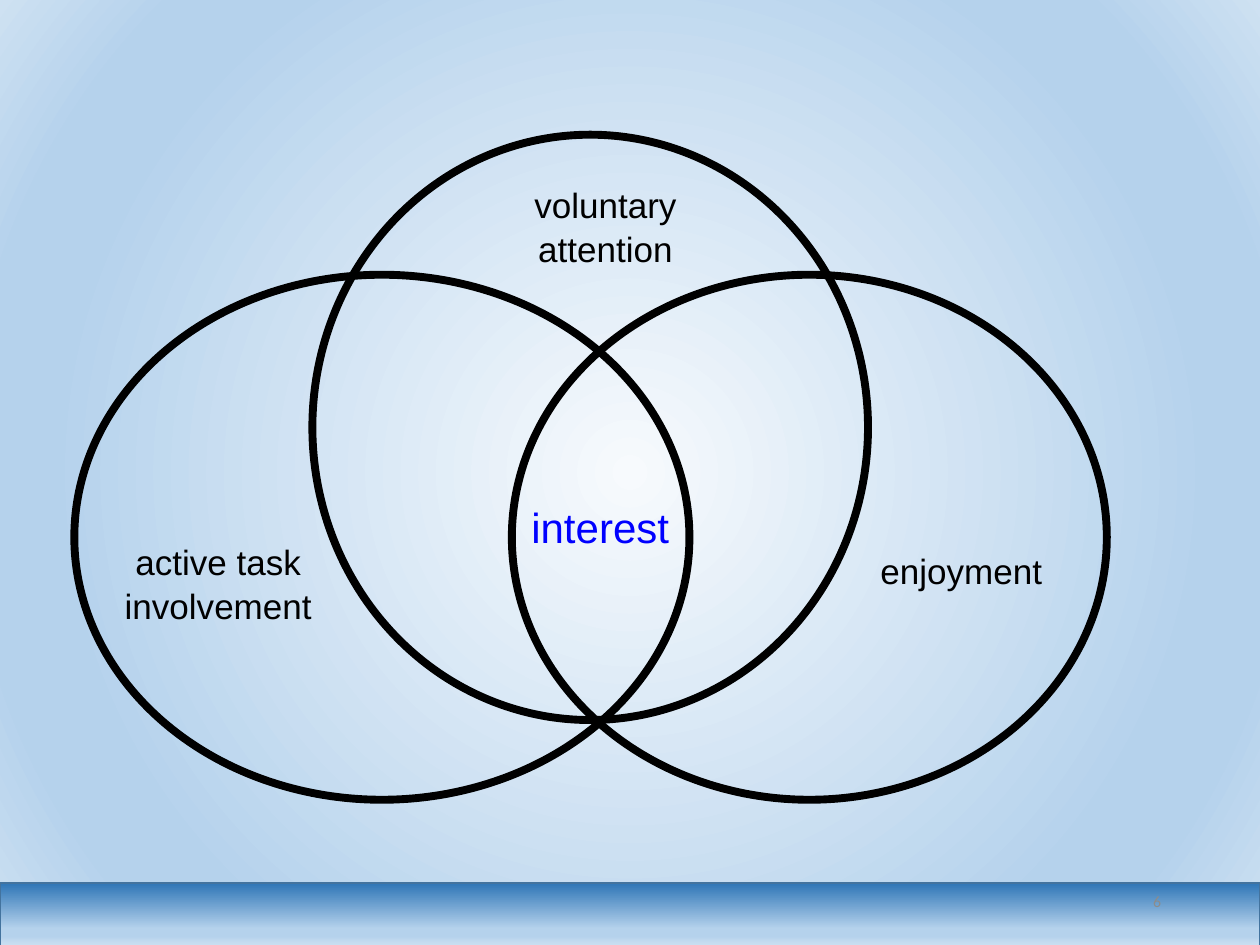
from lxml.etree import SubElement
from pptx import Presentation
from pptx.dml.color import RGBColor
from pptx.enum.shapes import MSO_SHAPE
from pptx.enum.text import MSO_ANCHOR, PP_ALIGN
from pptx.oxml.ns import qn
from pptx.util import Pt

COLORS = {"glow": "F7FAFD", "deep": "2E75B6", "sky": "B5D2EC", "pale": "CEE1F2",
          "edge": "43739E", "black": "000000", "blue": "0000FF", "gray": "8C8C8C"}


def color(name):
    return RGBColor.from_string(COLORS[name])


def set_gradient(fill, owner, stops, circular=False):
    """Give the fill of the owner element a gradient of (percent, color) stops."""
    fill.gradient()
    gradient = next(owner.iter(qn("a:gradFill")))
    for child in list(gradient):
        gradient.remove(child)
    stop_list = SubElement(gradient, qn("a:gsLst"))
    for percent, name in stops:
        stop = SubElement(stop_list, qn("a:gs"), pos=str(percent * 1000))
        SubElement(stop, qn("a:srgbClr"), val=COLORS[name])
    if circular:
        shade = SubElement(gradient, qn("a:path"), path="circle")
        SubElement(shade, qn("a:fillToRect"), l="50000", t="50000", r="50000", b="50000")
    else:
        SubElement(gradient, qn("a:lin"), ang="5400000", scaled="0")


deck = Presentation()
deck.slide_width, deck.slide_height = Pt(720), Pt(540)
page = deck.slides.add_slide(deck.slide_layouts[6])

# Background and bottom bar
outer_stops = [(83, "sky"), (100, "pale")]
set_gradient(page.background.fill, page.element,
             [(0, "glow"), (74, "sky")] + outer_stops, circular=True)
bar = page.shapes.add_shape(MSO_SHAPE.RECTANGLE, 0, Pt(504.5), Pt(720), Pt(36.5))
bar.shadow.inherit = False
set_gradient(bar.fill, bar.element, [(0, "deep"), (72, "sky")] + outer_stops)
bar.line.color.rgb = color("edge")
bar.line.width = Pt(1)

# Overlapping circles: enjoyment, attention, involvement
for bounds in [(292.5, 157, 340, 300), (178.5, 77, 317.5, 334.5), (42.5, 157, 351.5, 300)]:
    circle = page.shapes.add_shape(MSO_SHAPE.OVAL, *map(Pt, bounds))
    circle.shadow.inherit = False
    circle.fill.background()
    circle.line.color.rgb = color("black")
    circle.line.width = Pt(4.5)

# Labels and page number
label = {"size": Pt(20), "name": "Arial", "color": "black",
         "align": PP_ALIGN.CENTER, "anchor": MSO_ANCHOR.TOP, "spacing": 1.05}
texts = [
    ("6", (508.5, 500.5, 162, 28.5),
     {"size": Pt(9), "name": "Calibri", "color": "gray", "align": PP_ALIGN.RIGHT,
      "anchor": MSO_ANCHOR.MIDDLE, "spacing": 1.0}),
    ("voluntary attention", (275, 100, 142, 55.5), label),
    ("enjoyment", (496, 309.5, 136, 31), {**label, "align": PP_ALIGN.LEFT}),
    ("active task involvement", (59.5, 304, 130.5, 55.5), label),
    ("interest", (292, 281.5, 102, 36), {**label, "size": Pt(24), "color": "blue"}),
]
for words, bounds, style in texts:
    box = page.shapes.add_textbox(*map(Pt, bounds))
    box.text_frame.word_wrap = True
    box.text_frame.vertical_anchor = style["anchor"]
    para = box.text_frame.paragraphs[0]
    para.alignment = style["align"]
    para.line_spacing = style["spacing"]
    span = para.add_run()
    span.text = words
    for key in ("size", "name"):
        setattr(span.font, key, style[key])
    span.font.color.rgb = color(style["color"])

deck.save("out.pptx")
